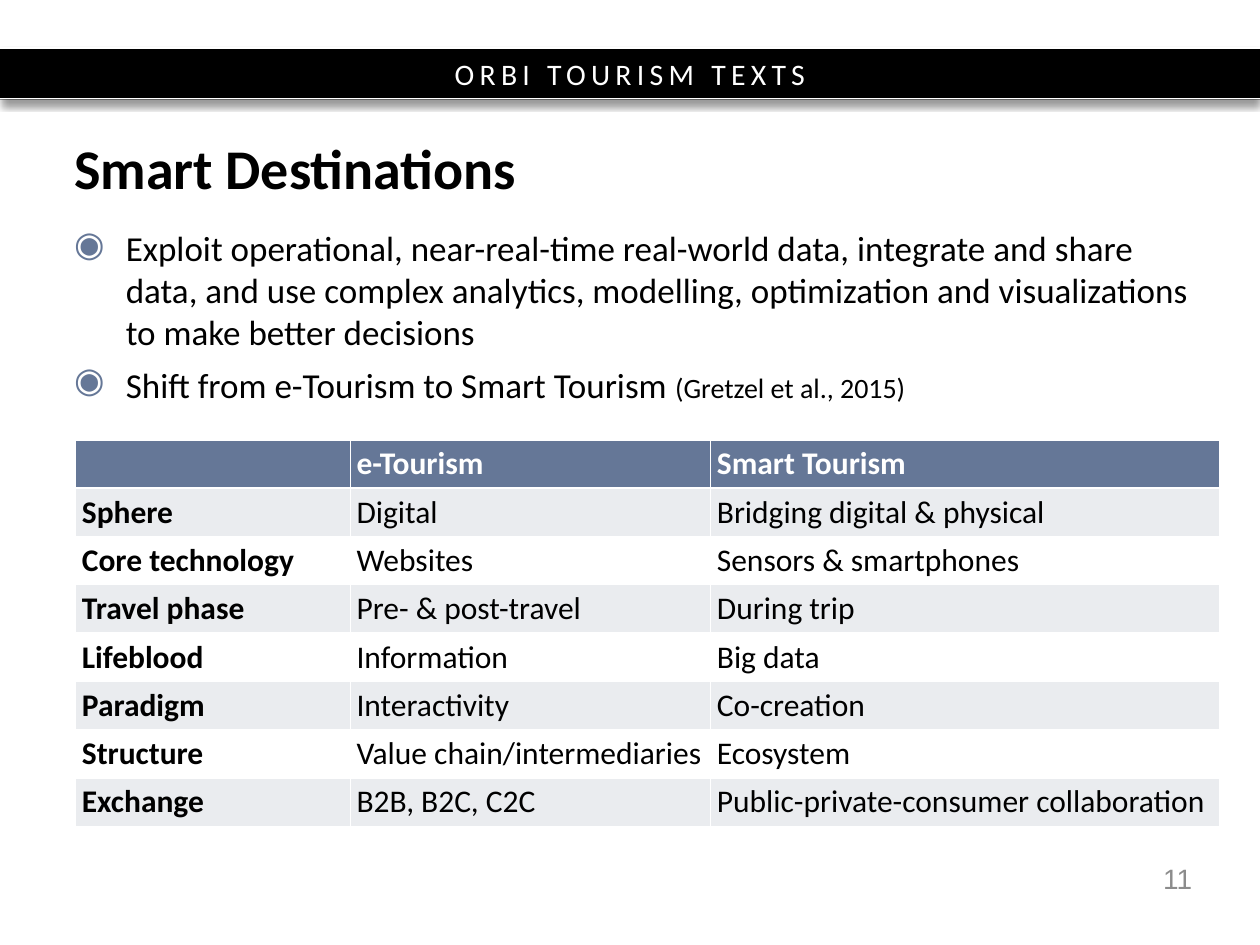
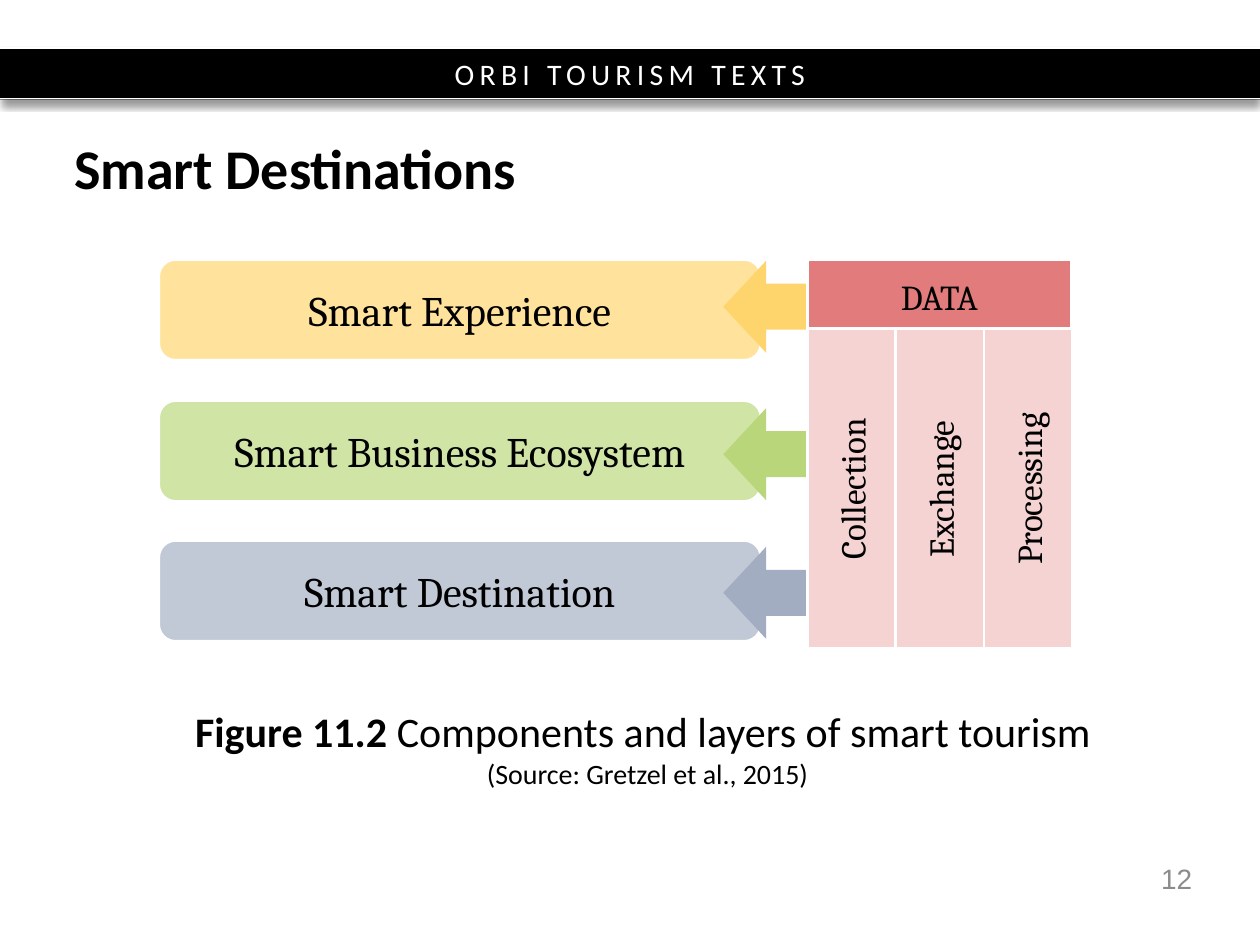
from dataclasses import dataclass

from lxml import etree
from pptx import Presentation
from pptx.dml.color import RGBColor
from pptx.enum.shapes import MSO_CONNECTOR, MSO_SHAPE
from pptx.enum.text import MSO_ANCHOR, PP_ALIGN
from pptx.oxml.ns import qn
from pptx.util import Inches, Pt

RECT = MSO_SHAPE.RECTANGLE
ROUND = MSO_SHAPE.ROUNDED_RECTANGLE
ARROW = MSO_SHAPE.LEFT_ARROW
LINE = MSO_CONNECTOR.STRAIGHT
TOP, MID = MSO_ANCHOR.TOP, MSO_ANCHOR.MIDDLE
LEFT, MIDDLE, RIGHT = PP_ALIGN.LEFT, PP_ALIGN.CENTER, PP_ALIGN.RIGHT


@dataclass(frozen=True)
class Theme:
    sans: str = "Calibri"
    serif: str = "Cambria"
    plain: str = "Arial"
    black: str = "000000"
    white: str = "FFFFFF"
    slate: str = "657797"
    pale: str = "EAECEF"
    gray: str = "8C8C8C"
    red: str = "E17B7C"
    pink: str = "F5D3D3"
    title: int = 32
    large: int = 24
    body: int = 20
    cell: int = 18
    band: int = 17
    small: int = 16


def color(code):
    return RGBColor.from_string(code)


def add(node, tag, **attrs):
    return etree.SubElement(node, qn(tag), attrs)


class Deck:
    def __init__(self, theme):
        self.theme = theme
        self.show = Presentation()
        self.show.slide_width = Inches(10)
        self.show.slide_height = Inches(7.5)
        self.slide = None

    def page(self, title, number):
        t = self.theme
        self.slide = self.show.slides.add_slide(self.show.slide_layouts[6])
        self.band("ORBI TOURISM TEXTS")
        para = self.text((0.49, 1.13, 9.08, 0.48), [(title, t.title, True)])
        para.line_spacing = Pt(32)
        self.text((7.23, 6.77, 2.33, 0.4), [(number, t.small, False)],
                  RIGHT, t.gray, t.plain)

    def band(self, label):
        t = self.theme
        bar = self.shape(RECT, (0, 0.38, 10, 0.41), t.black)
        para = self.fill(bar.text_frame, [(label, t.band, False)], MIDDLE, t.white)
        para.runs[0]._r.get_or_add_rPr().set("spc", "300")
        effects = bar._element.spPr.find(qn("a:effectLst"))
        shade = add(effects, "a:outerShdw", blurRad=str(Pt(4)), dist=str(Pt(3)),
                    dir="5400000", algn="t", rotWithShape="0")
        add(add(shade, "a:srgbClr", val=t.black), "a:alpha", val="40000")
        for y in (0.38, 0.78):
            self.line((0, y), (10, y))

    def line(self, start, end):
        rule = self.slide.shapes.add_connector(LINE, *map(Inches, start + end))
        rule.line.color.rgb = color(self.theme.white)
        rule.line.width = Pt(0.75)
        add(rule._element.spPr, "a:effectLst")

    def shape(self, kind, box, fill, edge=False):
        item = self.slide.shapes.add_shape(kind, *map(Inches, box))
        item.shadow.inherit = False
        item.fill.solid()
        item.fill.fore_color.rgb = color(fill)
        if edge:
            item.line.color.rgb = color(self.theme.white)
            item.line.width = Pt(1.5)
        else:
            item.line.fill.background()
        return item

    def block(self, kind, box, fill, label, size, turn=False):
        item = self.shape(kind, box, fill, True)
        self.fill(item.text_frame, [(label, size, False)], MIDDLE,
                  face=self.theme.serif)
        if turn:
            item.text_frame._txBody.bodyPr.set("vert", "vert270")

    def frame(self, box, anchor):
        frame = self.slide.shapes.add_textbox(*map(Inches, box)).text_frame
        frame.word_wrap = True
        frame.vertical_anchor = anchor
        return frame

    def text(self, box, runs, align=LEFT, ink=None, face=None):
        return self.fill(self.frame(box, MID), runs, align, ink, face)

    def fill(self, frame, runs, align=LEFT, ink=None, face=None):
        frame.vertical_anchor = MID
        para = frame.paragraphs[0]
        para.alignment = align
        self.put(para, runs, ink, face)
        return para

    def put(self, para, runs, ink=None, face=None):
        for words, size, bold in runs:
            if words == "\n":
                para.add_line_break()
                continue
            run = para.add_run()
            run.text = words
            font = run.font
            font.name = face or self.theme.sans
            font.size = Pt(size)
            font.bold = bold
            font.color.rgb = color(ink or self.theme.black)

    def list(self, box, items):
        frame = self.frame(box, TOP)
        for i, runs in enumerate(items):
            para = frame.paragraphs[0] if i == 0 else frame.add_paragraph()
            props = para._p.get_or_add_pPr()
            props.set("marL", str(Inches(0.41)))
            props.set("indent", str(Inches(-0.41)))
            add(add(props, "a:buClr"), "a:srgbClr", val=self.theme.slate)
            add(props, "a:buChar", char="◉")
            para.space_before = Pt(3 if i else 0)
            para.space_after = Pt(3)
            self.put(para, runs)

    def table(self, box, widths, rows):
        t = self.theme
        grid = self.slide.shapes.add_table(
            len(rows), len(widths), *map(Inches, box)).table
        for col, width in zip(grid.columns, widths):
            col.width = Inches(width)
        for r, row in enumerate(rows):
            grid.rows[r].height = Inches(box[3] / len(rows))
            back = t.slate if r == 0 else t.pale if r % 2 else t.white
            for c, words in enumerate(row):
                cell = grid.cell(r, c)
                cell.margin_left = cell.margin_right = Inches(0.05)
                cell.margin_top = cell.margin_bottom = Inches(0.04)
                cell.vertical_anchor = TOP if r else MID
                self.edge(cell)
                cell.fill.solid()
                cell.fill.fore_color.rgb = color(back)
                if words:
                    self.put(cell.text_frame.paragraphs[0],
                             [(words, t.cell, r == 0 or c == 0)],
                             t.black if r else t.white)

    def edge(self, cell):
        props = cell._tc.get_or_add_tcPr()
        for side in ("L", "R", "T", "B"):
            line = add(props, f"a:ln{side}", w=str(Pt(1)))
            add(add(line, "a:solidFill"), "a:srgbClr", val=self.theme.white)


def compare(deck):
    t = deck.theme
    deck.page("Smart Destinations", "11")
    deck.list((0.49, 1.75, 9.08, 4.94), [
        [("Exploit operational, near-real-time real-world data, integrate and "
          "share data, and use complex analytics, modelling, optimization and "
          "visualizations to make better decisions", t.body, False)],
        [("Shift from e-Tourism to Smart Tourism ", t.body, False),
         ("(Gretzel et al., 2015)", t.small, False)],
    ])
    deck.table((0.6, 3.49, 9.08, 3.07), (2.18, 2.86, 4.04), [
        ("", "e-Tourism", "Smart Tourism"),
        ("Sphere", "Digital", "Bridging digital & physical"),
        ("Core technology", "Websites", "Sensors & smartphones"),
        ("Travel phase", "Pre- & post-travel", "During trip"),
        ("Lifeblood", "Information", "Big data"),
        ("Paradigm", "Interactivity", "Co-creation"),
        ("Structure", "Value chain/intermediaries", "Ecosystem"),
        ("Exchange", "B2B, B2C, C2C", "Public-private-consumer collaboration"),
    ])


def layers(deck):
    t = deck.theme
    deck.page("Smart Destinations", "12")
    tiers = [
        ("Smart Experience", 2.06, "FFE39D", 2.07, "FED46C"),
        ("Smart Business Ecosystem", 3.18, "D0E4A6", 3.24, "B9D77A"),
        ("Smart Destination", 4.29, "C1C9D6", 4.34, "A2ADC1"),
    ]
    for label, top, light, tip, dark in tiers:
        deck.block(ROUND, (1.26, top, 4.78, 0.8), light, label, t.large)
        deck.shape(ARROW, (5.74, tip, 0.68, 0.73), dark)
    deck.block(RECT, (6.41, 2.06, 2.09, 0.59), t.red, "DATA", t.body)
    for i, label in enumerate(("Collection", "Exchange", "Processing")):
        deck.block(RECT, (6.41 + 0.7 * i, 2.61, 0.7, 2.54), t.pink,
                   label, t.body, True)
    deck.text((0.49, 5.59, 9.3, 0.69), [
        ("Figure 11.2 ", t.large, True),
        ("Components and layers of smart tourism ", t.large, False),
        ("\n", t.large, False),
        ("(Source: Gretzel et al., 2015)", t.small, False),
    ], MIDDLE)


def main():
    deck = Deck(Theme())
    compare(deck)
    layers(deck)
    deck.show.save("out.pptx")


if __name__ == "__main__":
    main()
